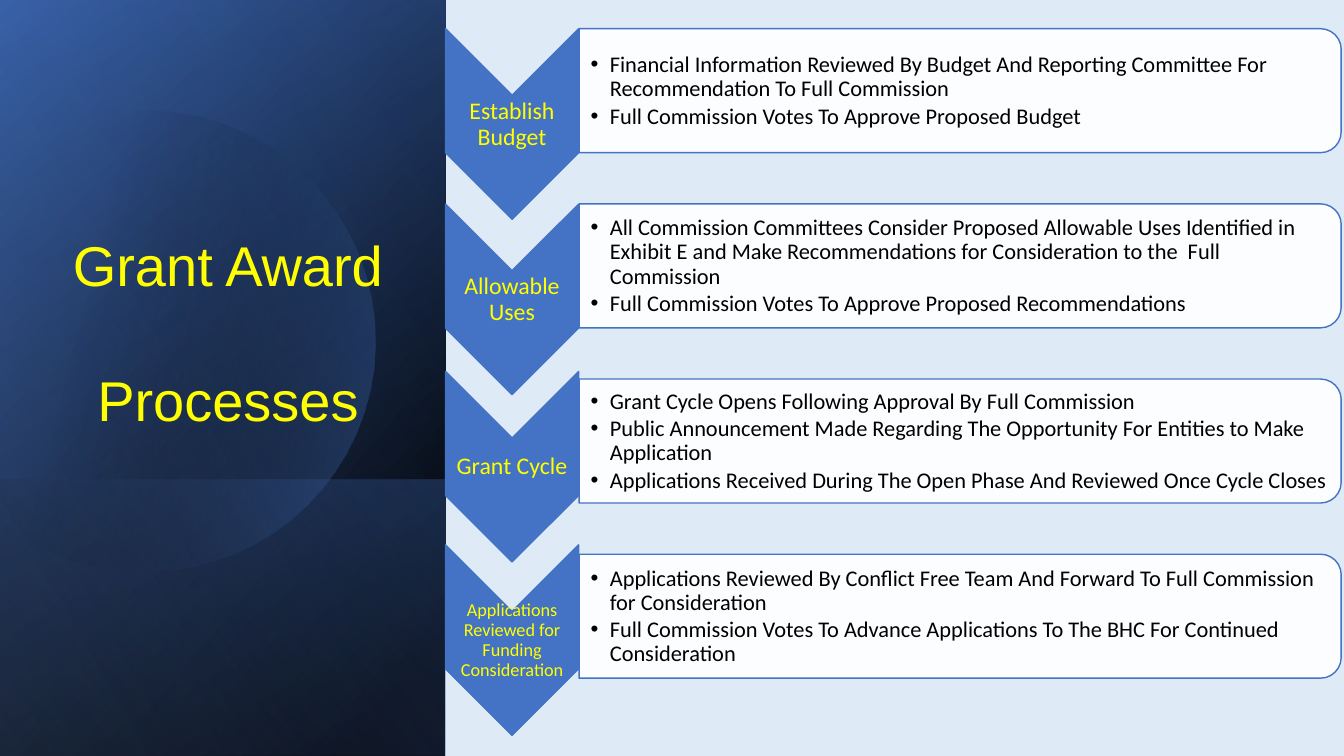
from dataclasses import dataclass

from lxml.etree import SubElement
from pptx import Presentation
from pptx.dml.color import RGBColor
from pptx.enum.shapes import MSO_SHAPE as Preset
from pptx.enum.text import MSO_ANCHOR as Anchor, MSO_AUTO_SIZE as AutoSize, PP_ALIGN as Align
from pptx.oxml.ns import qn
from pptx.util import Inches, Pt

WIDTH, HEIGHT = Inches(13.33), Inches(7.5)
COLUMN, ROW = WIDTH / 100, HEIGHT / 100

PALE_BLUE = RGBColor(0xDE, 0xEB, 0xF7)
BLUE = RGBColor(0x44, 0x72, 0xC4)
DARK_BLUE = RGBColor(0x2F, 0x55, 0x97)
LIGHT_BLUE = RGBColor(0x8F, 0xAA, 0xDC)
BLACK = RGBColor(0, 0, 0)
WHITE = RGBColor(0xFF, 0xFF, 0xFF)
YELLOW = RGBColor(0xFF, 0xFF, 0)


@dataclass(frozen=True)
class Box:
    left: float
    top: float
    width: float
    height: float

    def lengths(self) -> tuple[int, int, int, int]:
        return (round(self.left * COLUMN), round(self.top * ROW),
                round(self.width * COLUMN), round(self.height * ROW))


@dataclass(frozen=True)
class Stop:
    position: int
    color: RGBColor
    alpha: int = 100


@dataclass(frozen=True)
class Panel:
    box: Box
    angle: int
    stops: tuple[Stop, Stop]


@dataclass(frozen=True)
class Step:
    label: str
    label_size: int
    chevron_top: float
    bullets: tuple[str, ...]


SIDE = Box(0, 0, 33.15, 100)
BASE_PANELS = (
    Panel(SIDE, 50, (Stop(8, BLACK), Stop(100, DARK_BLUE))),
    Panel(SIDE, 30, (Stop(0, BLACK, 0), Stop(99, BLUE, 46))),
    Panel(Box(0, 63.47, 33.15, 36.53), 130, (Stop(2, BLUE, 29), Stop(100, BLACK, 30))),
)
TOP_PANEL = Panel(SIDE, 120, (Stop(0, BLACK, 0), Stop(99, LIGHT_BLUE, 11)))

DISC_STOPS = (Stop(29, BLACK, 0), Stop(100, BLUE, 43))
DISC_START = (11.18, 14.67)
DISC_SEGMENTS = (
    ((18.45, 14.93), (25.13, 23.6), (27.23, 36.67)),
    ((29.85, 52.93), (24.6, 69.73), (15.53, 74.4)),
    ((9.83, 77.33), (3.98, 74.8), (-0.23, 68.53)),
    ((-1.13, 67.07),),
    ((-1.13, 23.33),),
    ((0, 21.47),),
    ((1.73, 18.93), (3.75, 17.07), (6, 15.87)),
    ((7.73, 15.07), (9.45, 14.67), DISC_START),
)

FIRST_TOP, STEP_PITCH = 3.8, 23.17
STEPS = (
    Step("Establish Budget", 17, 3.8, (
        "Financial Information Reviewed By Budget And Reporting Committee For "
        "Recommendation To Full Commission",
        "Full Commission Votes To Approve Proposed Budget")),
    Step("Allowable Uses", 17, 27, (
        "All Commission Committees Consider Proposed Allowable Uses Identified in Exhibit E "
        "and Make Recommendations for Consideration to the  Full Commission",
        "Full Commission Votes To Approve Proposed Recommendations")),
    Step("Grant Cycle", 17, 49.13, (
        "Grant Cycle Opens Following Approval By Full Commission",
        "Public Announcement Made Regarding The Opportunity For Entities to Make Application",
        "Applications Received During The Open Phase And Reviewed Once Cycle Closes")),
    Step("Applications Reviewed for Funding Consideration", 13, 72.07, (
        "Applications Reviewed By Conflict Free Team And Forward To Full Commission "
        "for Consideration",
        "Full Commission Votes To Advance Applications To The BHC For Continued Consideration")),
)


def set_alpha(color_element, alpha: int) -> None:
    SubElement(color_element, qn("a:alpha")).set("val", str(alpha * 1000))


def fill_gradient(shape, stops: tuple[Stop, ...], angle: int) -> None:
    shape.shadow.inherit = False
    shape.line.fill.background()
    shape.fill.background()
    properties = shape._element.spPr
    empty_fill = properties.find(qn("a:noFill"))
    gradient = SubElement(properties, qn("a:gradFill"), rotWithShape="1")
    properties.replace(empty_fill, gradient)
    stop_list = SubElement(gradient, qn("a:gsLst"))
    for stop in stops:
        stop_element = SubElement(stop_list, qn("a:gs"), pos=str(stop.position * 1000))
        color = SubElement(stop_element, qn("a:srgbClr"), val=str(stop.color))
        if stop.alpha < 100:
            set_alpha(color, stop.alpha)
    SubElement(gradient, qn("a:lin"), ang=str(angle * 60000), scaled="0")


def fill_solid(shape, color: RGBColor, line: RGBColor | None = None, alpha: int = 100) -> None:
    shape.shadow.inherit = False
    shape.fill.solid()
    shape.fill.fore_color.rgb = color
    if alpha < 100:
        set_alpha(shape._element.spPr.find(qn("a:solidFill"))[0], alpha)
    if line is None:
        shape.line.fill.background()
    else:
        shape.line.color.rgb = line
        shape.line.width = Pt(1)


def add_turned(shapes, preset: Preset, box: Box):
    left, top, width, height = box.lengths()
    shift = (width - height) // 2
    shape = shapes.add_shape(preset, left + shift, top - shift, height, width)
    shape.rotation = 90
    return shape


def add_panel(shapes, panel: Panel) -> None:
    shape = add_turned(shapes, Preset.RECTANGLE, panel.box)
    shape._element.spPr.find(qn("a:xfrm")).set("flipH", "1")
    fill_gradient(shape, panel.stops, panel.angle)


def add_disc(shapes, samples: int = 16) -> None:
    points, current = [], DISC_START
    for segment in DISC_SEGMENTS:
        if len(segment) == 1:
            points.append(segment[0])
        else:
            controls = (current, *segment)
            for index in range(1, samples + 1):
                t = index / samples
                weights = ((1 - t) ** 3, 3 * t * (1 - t) ** 2, 3 * t * t * (1 - t), t ** 3)
                points.append(tuple(
                    sum(weight * control[axis] for weight, control in zip(weights, controls))
                    for axis in (0, 1)))
        current = segment[-1]
    builder = shapes.build_freeform(round(DISC_START[0] * COLUMN), round(DISC_START[1] * ROW))
    builder.add_line_segments([(round(x * COLUMN), round(y * ROW)) for x, y in points], close=True)
    fill_gradient(builder.convert_to_shape(), DISC_STOPS, 14)


def write_text(shape, *texts: str, size: int, color: RGBColor, font: str = "Calibri",
               align: Align = Align.CENTER, anchor: Anchor = Anchor.MIDDLE, spacing: float = 0.9,
               after: float = 0, inset: float | None = None, bullet: bool = False) -> None:
    frame = shape.text_frame
    frame.word_wrap = True
    frame.auto_size = AutoSize.NONE
    frame.vertical_anchor = anchor
    if inset is not None:
        frame.margin_left = Inches(inset)
        frame.margin_top = frame.margin_right = frame.margin_bottom = Inches(0.01)
    for index, text in enumerate(texts):
        paragraph = frame.add_paragraph() if index else frame.paragraphs[0]
        paragraph.alignment = align
        paragraph.line_spacing = spacing
        paragraph.space_after = Pt(after)
        if bullet:
            paragraph.level = 1
            properties = paragraph._p.get_or_add_pPr()
            properties.set("marL", str(Inches(0.19)))
            properties.set("indent", str(-Inches(0.19)))
            SubElement(properties, qn("a:buFont"), typeface="Arial")
            SubElement(properties, qn("a:buChar"), char="•")
        run = paragraph.add_run()
        run.text = text
        run.font.size = Pt(size)
        run.font.name = font
        run.font.color.rgb = color


def add_step(shapes, step: Step, top: float) -> None:
    chevron = add_turned(shapes, Preset.CHEVRON, Box(33.15, step.chevron_top, 9.9, 25.2))
    fill_solid(chevron, BLUE, BLUE)
    label = shapes.add_textbox(*Box(33.15, step.chevron_top + 8.87, 9.9, 7.6).lengths())
    write_text(label, step.label, size=step.label_size, color=YELLOW, inset=0.01)
    card = add_turned(shapes, Preset.ROUND_2_SAME_RECTANGLE, Box(43.09, top, 56.7, 16.4))
    fill_solid(card, WHITE, BLUE, alpha=90)
    details = shapes.add_textbox(*Box(43.05, top + 0.87, 56.25, 14.8).lengths())
    write_text(details, *step.bullets, size=16, color=BLACK, align=Align.LEFT,
               after=2.4, inset=0.12, bullet=True)


def main() -> None:
    presentation = Presentation()
    presentation.slide_width, presentation.slide_height = WIDTH, HEIGHT
    slide = presentation.slides.add_slide(presentation.slide_layouts[5])
    shapes = slide.shapes
    slide.background.fill.solid()
    slide.background.fill.fore_color.rgb = PALE_BLUE
    fill_solid(shapes.add_shape(Preset.RECTANGLE, *Box(0, 0, 100, 100).lengths()), PALE_BLUE)
    for panel in BASE_PANELS:
        add_panel(shapes, panel)
    add_disc(shapes)
    add_panel(shapes, TOP_PANEL)
    title = shapes.title
    title.left, title.top, title.width, title.height = Box(3.83, 8.53, 26.25, 49.33).lengths()
    write_text(title, "Grant Award Processes", size=40, color=YELLOW, font="Arial",
               anchor=Anchor.BOTTOM, spacing=2.0)
    shapes._spTree.append(title._element)
    diagram = shapes.add_group_shape().shapes
    for index, step in enumerate(STEPS):
        add_step(diagram, step, FIRST_TOP + index * STEP_PITCH)
    presentation.save("out.pptx")


if __name__ == "__main__":
    main()
